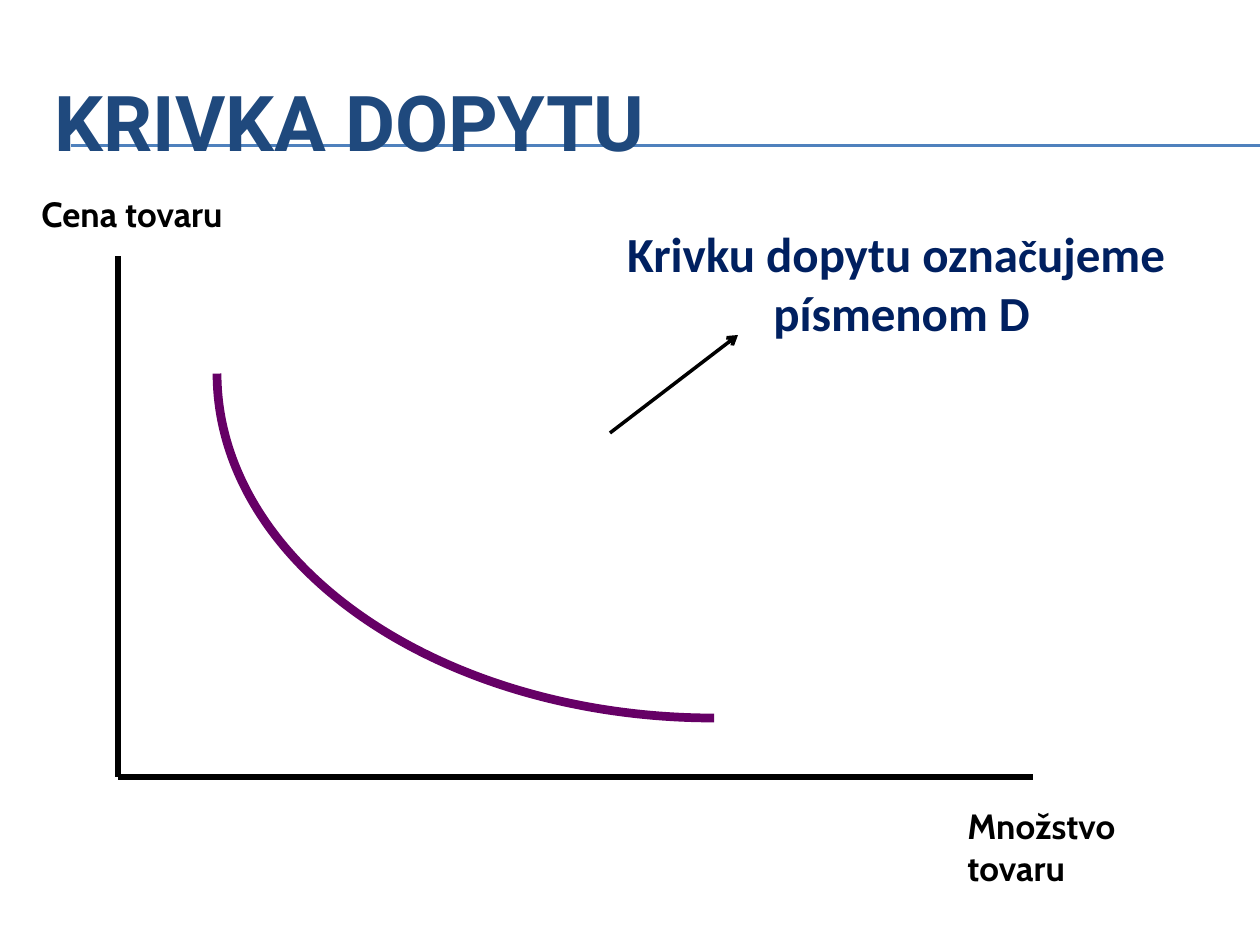
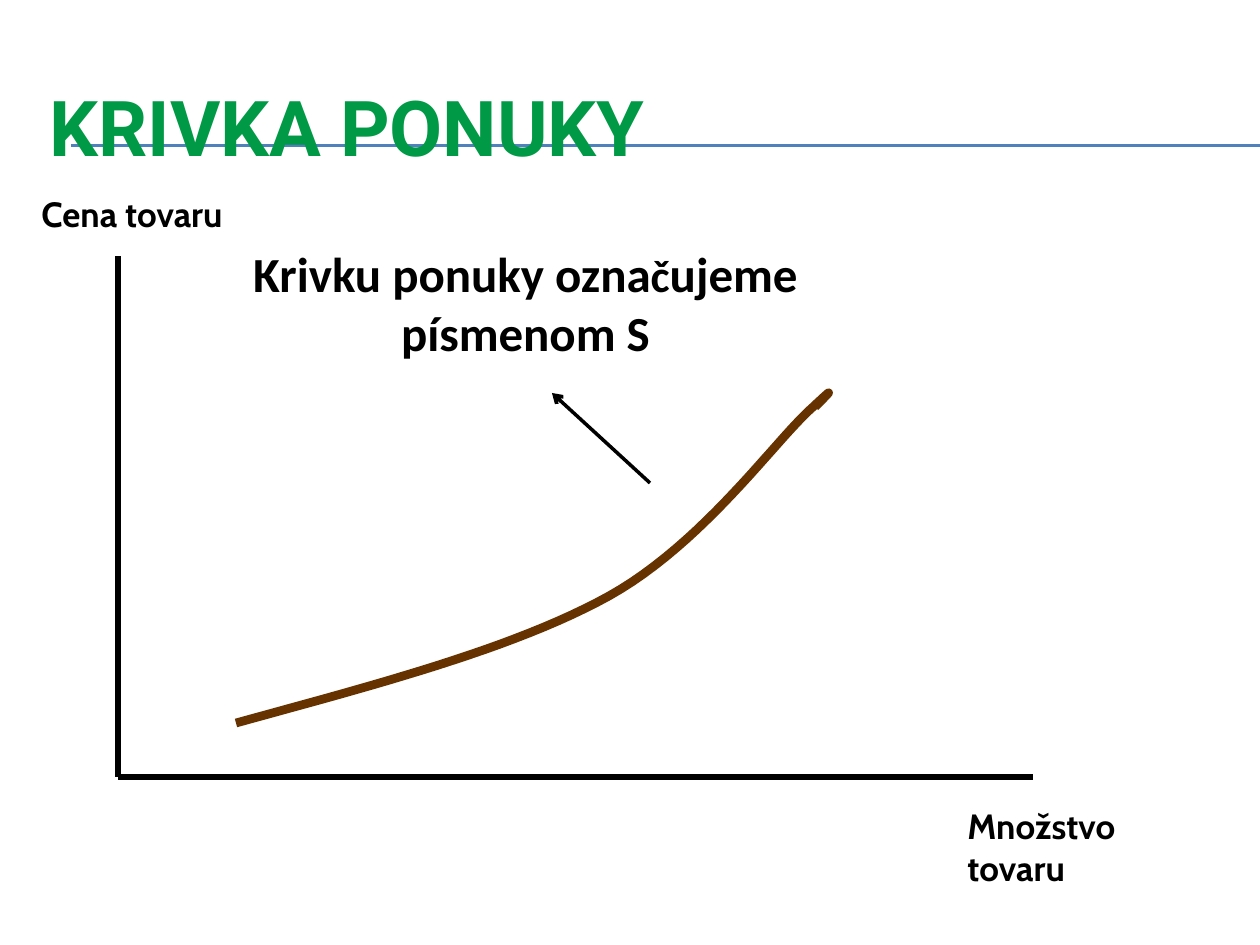
from dataclasses import dataclass
from typing import NamedTuple

from pptx import Presentation
from pptx.dml.color import RGBColor as RGB
from pptx.enum.shapes import MSO_CONNECTOR as Link, MSO_SHAPE as Preset
from pptx.enum.text import MSO_ANCHOR as Anchor, MSO_AUTO_SIZE as Fit, PP_ALIGN as Align
from pptx.oxml.ns import qn
from pptx.util import Pt

SCALE = 914400 / 126
STEPS = 24


class Point(NamedTuple):
    x: int
    y: int


class Box(NamedTuple):
    x: int
    y: int
    w: int
    h: int


class Style(NamedTuple):
    font: str
    size: int
    color: str


class Stroke(NamedTuple):
    color: str
    width: float


@dataclass(frozen=True)
class Theme:
    navy: str = "1F497D"
    green: str = "009A46"
    deep: str = "002060"
    black: str = "000000"
    rule: Stroke = Stroke("4F81BD", 0.75)
    axis: Stroke = Stroke("000000", 3.5)
    arrow: Stroke = Stroke("000000", 2)
    demand: Stroke = Stroke("660066", 5)
    supply: Stroke = Stroke("663300", 5)
    label: Style = Style("Cabin", 20, "000000")
    head: str = "Roboto"
    note: str = "Calibri"
    large: int = 44
    medium: int = 28
    caron: int = 26


@dataclass(frozen=True)
class Label:
    text: str
    box: Box


@dataclass(frozen=True)
class Graph:
    title: Label
    tint: str
    note: Label
    ink: str
    start: Point
    end: Point


THEME = Theme()
ORIGIN = Point(118, 777)
AXES = (Point(118, 256), Point(1033, 777))
RULES = (145, 146)
LABELS = (
    Label("Cena tovaru", Box(29, 186, 217, 55)),
    Label("Množstvo tovaru", Box(955, 798, 270, 55)),
)
DEMAND = Graph(
    Label("KRIVKA DOPYTU", Box(42, 63, 1197, 116)), THEME.navy,
    Label("Krivku dopytu označujeme \npísmenom D", Box(610, 217, 583, 130)), THEME.deep,
    Point(610, 433), Point(738, 335),
)
SUPPLY = Graph(
    Label("KRIVKA PONUKY", Box(37, 68, 1197, 116)), THEME.green,
    Label("Krivku ponuky označujeme \npísmenom S ", Box(236, 237, 590, 130)), THEME.black,
    Point(650, 483), Point(552, 393),
)
ARC = Box(217, 29, 994, 689)
BENDS = (
    Point(236, 723),
    Point(374, 685), Point(513, 649), Point(609, 596),
    Point(704, 543), Point(777, 438), Point(813, 407),
    Point(847, 375), Point(815, 407), Point(815, 407),
)


def px(size: float) -> int:
    return round(size * SCALE)


def place(shape, box: Box) -> None:
    shape.left, shape.top, shape.width, shape.height = map(px, box)


def ink(line, stroke: Stroke) -> None:
    line.color.rgb = RGB.from_string(stroke.color)
    line.width = Pt(stroke.width)


def paint(run, style: Style) -> None:
    font = run.font
    font.name, font.size, font.bold = style.font, Pt(style.size), True
    font.color.rgb = RGB.from_string(style.color)


def draw_line(slide, start: Point, end: Point, stroke: Stroke, tip: bool = False):
    line = slide.shapes.add_connector(Link.STRAIGHT, *map(px, start + end))
    ink(line.line, stroke)
    props = line.element.spPr
    props.append(props.makeelement(qn("a:effectLst"), {}))
    if tip:
        edge = line.line._get_or_add_ln()
        edge.append(edge.makeelement(qn("a:tailEnd"), {"type": "arrow"}))
    return line


def add_box(slide, box: Box, wrap: bool):
    frame = slide.shapes.add_textbox(*map(px, box)).text_frame
    frame.word_wrap = wrap
    frame.auto_size = Fit.SHAPE_TO_FIT_TEXT
    return frame


def add_label(slide, label: Label) -> None:
    frame = add_box(slide, label.box, True)
    frame.text = label.text
    paint(frame.paragraphs[0].runs[0], THEME.label)


def add_note(slide, note: Label, color: str) -> None:
    frame = add_box(slide, note.box, False)
    frame.text = note.text
    for para in frame.paragraphs:
        para.alignment = Align.CENTER
        parts = para.text.partition("č")
        para.text = parts[0]
        for part in filter(None, parts[1:]):
            para.add_run().text = part
        for run in para.runs:
            size = THEME.caron if run.text == "č" else THEME.medium
            paint(run, Style(THEME.note, size, color))


def add_title(slide, title: Label, color: str) -> None:
    shape = slide.shapes.title
    place(shape, title.box)
    frame = shape.text_frame
    frame.text = title.text
    frame.vertical_anchor = Anchor.MIDDLE
    para = frame.paragraphs[0]
    para.alignment = Align.LEFT
    paint(para.runs[0], Style(THEME.head, THEME.large, color))


def add_graph(deck, graph: Graph):
    slide = deck.slides.add_slide(deck.slide_layouts[5])
    add_title(slide, graph.title, graph.tint)
    for end in AXES:
        draw_line(slide, ORIGIN, end, THEME.axis)
    for label in LABELS:
        add_label(slide, label)
    draw_line(slide, graph.start, graph.end, THEME.arrow, True)
    add_note(slide, graph.note, graph.ink)
    return slide


def add_rules(deck, slide) -> None:
    tree = deck.slide_master.shapes.element
    for key, y in enumerate(RULES, 20):
        rule = draw_line(slide, Point(71, y), Point(1260, y), THEME.rule).element
        rule.nvCxnSpPr.cNvPr.set("id", str(key))
        tree.append(rule)


def finish(curve, stroke: Stroke) -> None:
    curve.shadow.inherit = False
    curve.fill.background()
    ink(curve.line, stroke)


def draw_arc(slide) -> None:
    arc = slide.shapes.add_shape(Preset.ARC, *map(px, ARC))
    arc.rotation = 180
    finish(arc, THEME.demand)


def blend(a: float, b: float, c: float, d: float, t: float) -> float:
    u = 1 - t
    return a * u**3 + 3 * b * u * u * t + 3 * c * u * t * t + d * t**3


def draw_curve(slide) -> None:
    dots = []
    for i in range(0, len(BENDS) - 1, 3):
        xs, ys = zip(*BENDS[i:i + 4])
        for step in range(1, STEPS + 1):
            t = step / STEPS
            dots.append((px(blend(*xs, t)), px(blend(*ys, t))))
    pen = slide.shapes.build_freeform(*map(px, BENDS[0]))
    pen.add_line_segments(dots, close=False)
    finish(pen.convert_to_shape(), THEME.supply)


def main() -> None:
    deck = Presentation()
    deck.slide_width, deck.slide_height = px(1260), px(945)
    first = add_graph(deck, DEMAND)
    add_rules(deck, first)
    draw_arc(first)
    draw_curve(add_graph(deck, SUPPLY))
    deck.save("out.pptx")


if __name__ == "__main__":
    main()
